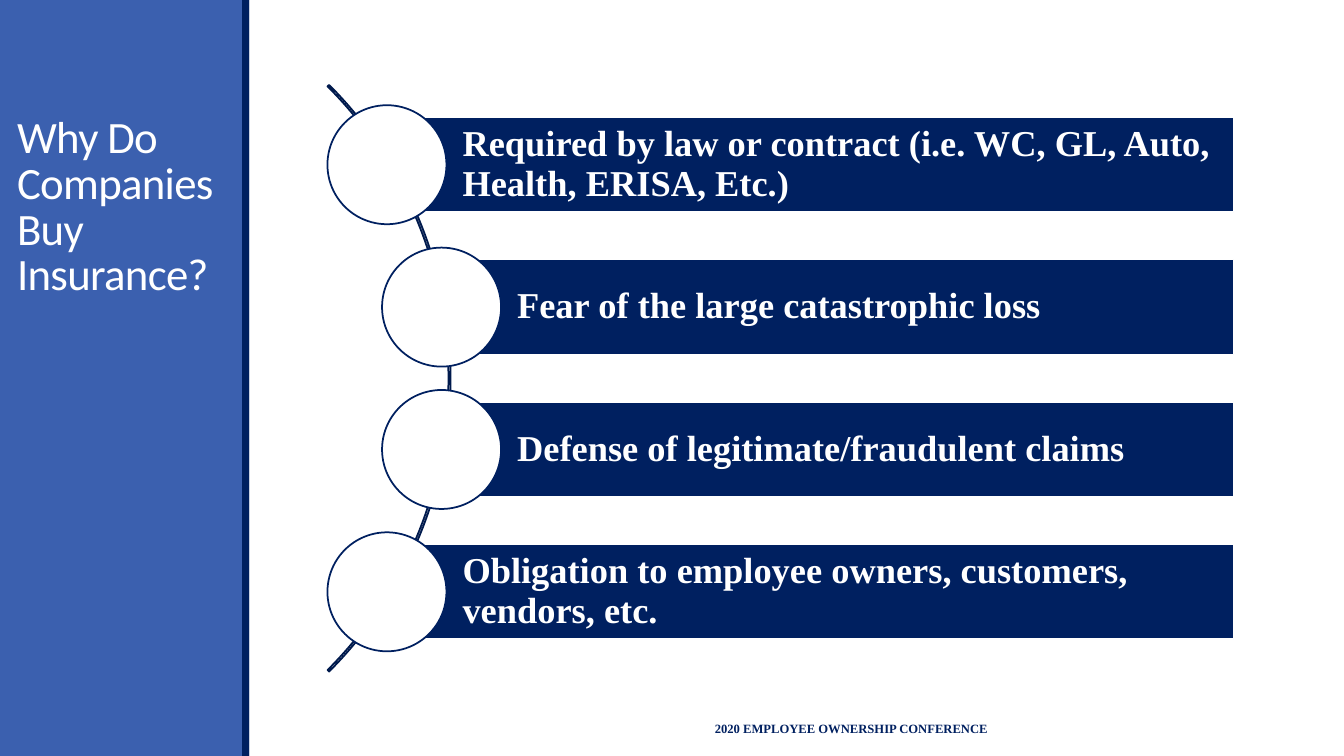
from dataclasses import dataclass

from pptx import Presentation
from pptx.dml.color import RGBColor
from pptx.enum.shapes import MSO_SHAPE
from pptx.enum.text import MSO_ANCHOR, MSO_AUTO_SIZE, PP_ALIGN
from pptx.util import Pt


@dataclass(frozen=True)
class Theme:
    navy: RGBColor = RGBColor(0x00, 0x20, 0x60)
    arc: RGBColor = RGBColor(0x00, 0x1A, 0x4D)
    blue: RGBColor = RGBColor(0x3B, 0x60, 0xAF)
    white: RGBColor = RGBColor(0xFF, 0xFF, 0xFF)
    title_font: str = "Calibri"
    body_font: str = "Times New Roman"
    title_size: int = 32
    body_size: int = 26
    footer_size: int = 9
    line_width: float = 1.25


theme = Theme()

prs = Presentation()
prs.slide_width, prs.slide_height = Pt(960), Pt(540)
slide = prs.slides.add_slide(prs.slide_layouts[5])
shapes = slide.shapes


def add_shape(kind, x, y, w, h, fill=None, line=None):
    sp = shapes.add_shape(kind, Pt(x), Pt(y), Pt(w), Pt(h))
    sp.shadow.inherit = False
    if fill is None:
        sp.fill.background()
    else:
        sp.fill.solid()
        sp.fill.fore_color.rgb = fill
    if line is None:
        sp.line.fill.background()
    else:
        sp.line.color.rgb = line
        sp.line.width = Pt(theme.line_width)
    return sp


def write(sp, text, font, size, color, bold, anchor, margins, spacing=1.0):
    """Put one left-aligned run in sp; margins are left, top, right, bottom."""
    tf = sp.text_frame
    tf.word_wrap = True
    tf.auto_size = MSO_AUTO_SIZE.NONE
    tf.vertical_anchor = anchor
    tf.margin_left, tf.margin_top, tf.margin_right, tf.margin_bottom = map(Pt, margins)
    p = tf.paragraphs[0]
    p.alignment = PP_ALIGN.LEFT
    p.line_spacing = spacing
    r = p.add_run()
    r.text = text
    r.font.name, r.font.size, r.font.bold = font, Pt(size), bold
    r.font.color.rgb = color
    return r


# Side panel and title
add_shape(MSO_SHAPE.RECTANGLE, 0, 0, 178, 540, theme.blue)
add_shape(MSO_SHAPE.RECTANGLE, 173, 0, 5, 540, theme.navy)

title = shapes.title
title.left, title.top, title.width, title.height = Pt(5), Pt(38), Pt(173), Pt(180)
r = write(title, "Why Do Companies Buy Insurance?", theme.title_font, theme.title_size,
          theme.white, False, MSO_ANCHOR.BOTTOM, (7.2, 3.6, 7.2, 3.6), 0.85)
r.font._element.set("spc", "-50")
shapes._spTree.append(title._element)  # bring the title in front of the panel

# Footer
footer = shapes.add_textbox(Pt(430), Pt(506), Pt(366), Pt(29))
write(footer, "2020 EMPLOYEE OWNERSHIP CONFERENCE", theme.body_font, theme.footer_size,
      theme.navy, True, MSO_ANCHOR.MIDDLE, (80.6, 3.6, 7.2, 3.6))

# Reasons along an arc
MIDDLE, PITCH = 270.2, 101.7
BAR_HEIGHT, BAR_RIGHT = 67.8, 881.2
CIRCLE, ARC = 85, 592.6

arc = add_shape(MSO_SHAPE.BLOCK_ARC, -270.7, MIDDLE - ARC / 2, ARC, ARC, line=theme.arc)
for i, value in enumerate((189, 27, 0.0026)):
    arc.adjustments[i] = value

reasons = [
    (276.4, "Required by law or contract (i.e. WC, GL, Auto, Health, ERISA, Etc.)"),
    (315.4, "Fear of the large catastrophic loss"),
    (315.4, "Defense of legitimate/fraudulent claims"),
    (276.4, "Obligation to employee owners, customers, vendors, etc."),
]
for i, (x, text) in enumerate(reasons):
    y = MIDDLE + (i - (len(reasons) - 1) / 2) * PITCH
    bar = add_shape(MSO_SHAPE.RECTANGLE, x, y - BAR_HEIGHT / 2, BAR_RIGHT - x, BAR_HEIGHT,
                    theme.navy, theme.white)
    write(bar, text, theme.body_font, theme.body_size, theme.white, True,
          MSO_ANCHOR.MIDDLE, (54, 5, 5, 5), 0.9)
    add_shape(MSO_SHAPE.OVAL, x - CIRCLE / 2, y - CIRCLE / 2, CIRCLE, CIRCLE,
              theme.white, theme.navy)

prs.save("out.pptx")
